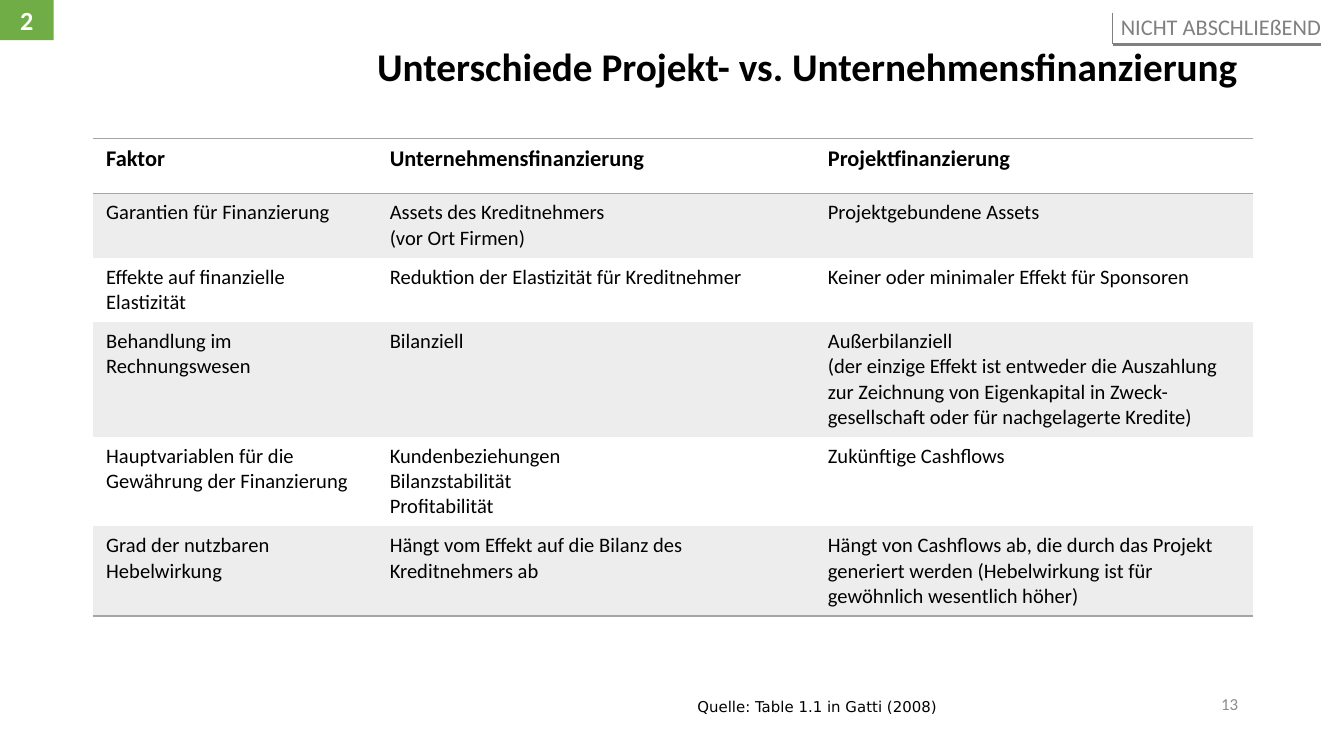
from lxml import etree
from pptx import Presentation
from pptx.dml.color import RGBColor
from pptx.enum.shapes import MSO_CONNECTOR, MSO_SHAPE
from pptx.enum.text import MSO_ANCHOR, PP_ALIGN
from pptx.oxml.ns import qn
from pptx.util import Inches, Pt

LEFT, CENTER, RIGHT = PP_ALIGN.LEFT, PP_ALIGN.CENTER, PP_ALIGN.RIGHT
TOP, MIDDLE = MSO_ANCHOR.TOP, MSO_ANCHOR.MIDDLE
RECTANGLE, STRAIGHT = MSO_SHAPE.RECTANGLE, MSO_CONNECTOR.STRAIGHT

BLACK = RGBColor(0x00, 0x00, 0x00)
WHITE = RGBColor(0xFF, 0xFF, 0xFF)
GREEN = RGBColor(0x70, 0xAD, 0x47)
GREY = RGBColor(0x80, 0x80, 0x80)
NUMBER_GREY = RGBColor(0x8C, 0x8C, 0x8C)
RULE_GREY = RGBColor(0xA5, 0xA5, 0xA5)
BAND_GREY = RGBColor(0xED, 0xED, 0xED)
PLAIN_TABLE_STYLE = "{2D5ABB26-0587-4C30-8999-92F81FD0307C}"

COLUMN_WIDTHS = [2.11, 3.26, 3.26]
ROW_HEIGHT = 0.41
COMPARISON = [
    ["Faktor", "Unternehmensfinanzierung", "Projektfinanzierung"],
    ["Garantien für Finanzierung",
     "Assets des Kreditnehmers\v(vor Ort Firmen)",
     "Projektgebundene Assets"],
    ["Effekte auf finanzielle Elastizität",
     "Reduktion der Elastizität für Kreditnehmer",
     "Keiner oder minimaler Effekt für Sponsoren"],
    ["Behandlung im Rechnungswesen",
     "Bilanziell",
     "Außerbilanziell\n(der einzige Effekt ist entweder die Auszahlung zur "
     "Zeichnung von Eigenkapital in Zweck-gesellschaft oder für "
     "nachgelagerte Kredite)"],
    ["Hauptvariablen für die Gewährung der Finanzierung",
     "Kundenbeziehungen\nBilanzstabilität\nProfitabilität",
     "Zukünftige Cashflows"],
    ["Grad der nutzbaren Hebelwirkung",
     "Hängt vom Effekt auf die Bilanz des Kreditnehmers ab",
     "Hängt von Cashflows ab, die durch das Projekt generiert werden "
     "(Hebelwirkung ist für gewöhnlich wesentlich höher)"],
]


def write_text(frame, text, size=11, color=BLACK, bold=False, font="Calibri",
               align=LEFT, anchor=TOP, wrap=True, spacing=None):
    """Fill a text frame with one formatted paragraph per line of text."""
    frame.word_wrap = wrap
    frame.vertical_anchor = anchor
    for index, line in enumerate(text.split("\n")):
        paragraph = frame.paragraphs[0] if index == 0 else frame.add_paragraph()
        paragraph.text = line
        paragraph.alignment = align
        paragraph.line_spacing = spacing
        for run in paragraph.runs:
            run.font.name = font
            run.font.size = Pt(size)
            run.font.bold = bold
            run.font.color.rgb = color


def add_label(slide, box, text, **style):
    """Place a text box and return its text frame."""
    frame = slide.shapes.add_textbox(*map(Inches, box)).text_frame
    write_text(frame, text, **style)
    return frame


def add_rule(slide, start, end, width):
    """Draw a straight grey line without a shadow."""
    rule = slide.shapes.add_connector(STRAIGHT, *map(Inches, start + end))
    rule.line.color.rgb = GREY
    rule.line.width = Pt(width)
    etree.SubElement(rule._element.spPr, qn("a:effectLst"))


def add_cell_rules(cell, sides):
    """Draw thin grey borders on the given sides of a table cell."""
    properties = cell._tc.get_or_add_tcPr()
    for index, side in enumerate(sides):
        border = etree.Element(qn(f"a:ln{side}"), w=str(Pt(1)))
        fill = etree.SubElement(border, qn("a:solidFill"))
        etree.SubElement(fill, qn("a:srgbClr"), val=str(RULE_GREY))
        properties.insert(index, border)


def add_title(slide, box, text):
    """Move and format the title placeholder."""
    title = slide.shapes.title
    title.left, title.top, title.width, title.height = map(Inches, box)
    write_text(title.text_frame, text, size=21, bold=True, align=RIGHT,
               anchor=MIDDLE, spacing=0.9)


def add_chapter_badge(slide, box, text):
    """Place the green chapter number."""
    badge = slide.shapes.add_shape(RECTANGLE, *map(Inches, box))
    badge.shadow.inherit = False
    badge.fill.solid()
    badge.fill.fore_color.rgb = GREEN
    badge.line.fill.background()
    write_text(badge.text_frame, text, size=14, color=WHITE, bold=True,
               align=CENTER, anchor=MIDDLE)


def add_sticker(slide, box, text):
    """Place a note with a line on its left and lower side."""
    left, top, width, height = box
    bottom = top + height
    frame = add_label(slide, box, text, size=12, color=GREY, align=RIGHT,
                      wrap=False)
    frame.margin_left, frame.margin_bottom = Inches(0.04), Inches(0.03)
    frame.margin_top = frame.margin_right = 0
    add_rule(slide, (left + width, bottom), (left, bottom), 1.5)
    add_rule(slide, (left, top), (left, bottom), 0.5)


def add_comparison(slide, box):
    """Build the banded comparison table."""
    holder = slide.shapes.add_table(len(COMPARISON), len(COLUMN_WIDTHS),
                                    *map(Inches, box))
    table = holder.table
    table._tbl.tblPr.find(qn("a:tableStyleId")).text = PLAIN_TABLE_STYLE
    for column, width in zip(table.columns, COLUMN_WIDTHS):
        column.width = Inches(width)
    last = len(COMPARISON) - 1
    for index, texts in enumerate(COMPARISON):
        table.rows[index].height = Inches(ROW_HEIGHT)
        is_header = index == 0
        for cell, text in zip(table.rows[index].cells, texts):
            write_text(cell.text_frame, text, size=12 if is_header else 11,
                       bold=is_header)
            if index % 2:
                cell.fill.solid()
                cell.fill.fore_color.rgb = BAND_GREY
            else:
                cell.fill.background()
            add_cell_rules(cell, {0: "TB", last: "B"}.get(index, ""))
    holder.height = Inches(box[3])


def add_footer(slide, left, top):
    """Place the citation and the page number."""
    add_label(slide, (left, top + 0.05, 3.23, 0.24),
              "Quelle: Table 1.1 in Gatti (2008)", size=8, font="DejaVu Sans")
    add_label(slide, (left + 1.97, top, 2.25, 0.3), "13", size=9,
              color=NUMBER_GREY, align=RIGHT, anchor=MIDDLE)


def main():
    """Build and save the slide."""
    deck = Presentation()
    deck.slide_width = Inches(10)
    deck.slide_height = deck.slide_width * 9 // 16
    slide = deck.slides.add_slide(deck.slide_layouts[5])
    add_title(slide, (0.69, 0.3, 8.62, 0.43),
              "Unterschiede Projekt- vs. Unternehmensfinanzierung")
    add_comparison(slide, (0.69, 1.03, 8.63, 3.47))
    add_sticker(slide, (8.28, 0.1, 1.55, 0.23), "NICHT ABSCHLIEßEND")
    add_footer(slide, 5.09, 5.09)
    add_chapter_badge(slide, (0, 0, 0.4, 0.3), "2")
    deck.save("out.pptx")


if __name__ == "__main__":
    main()
